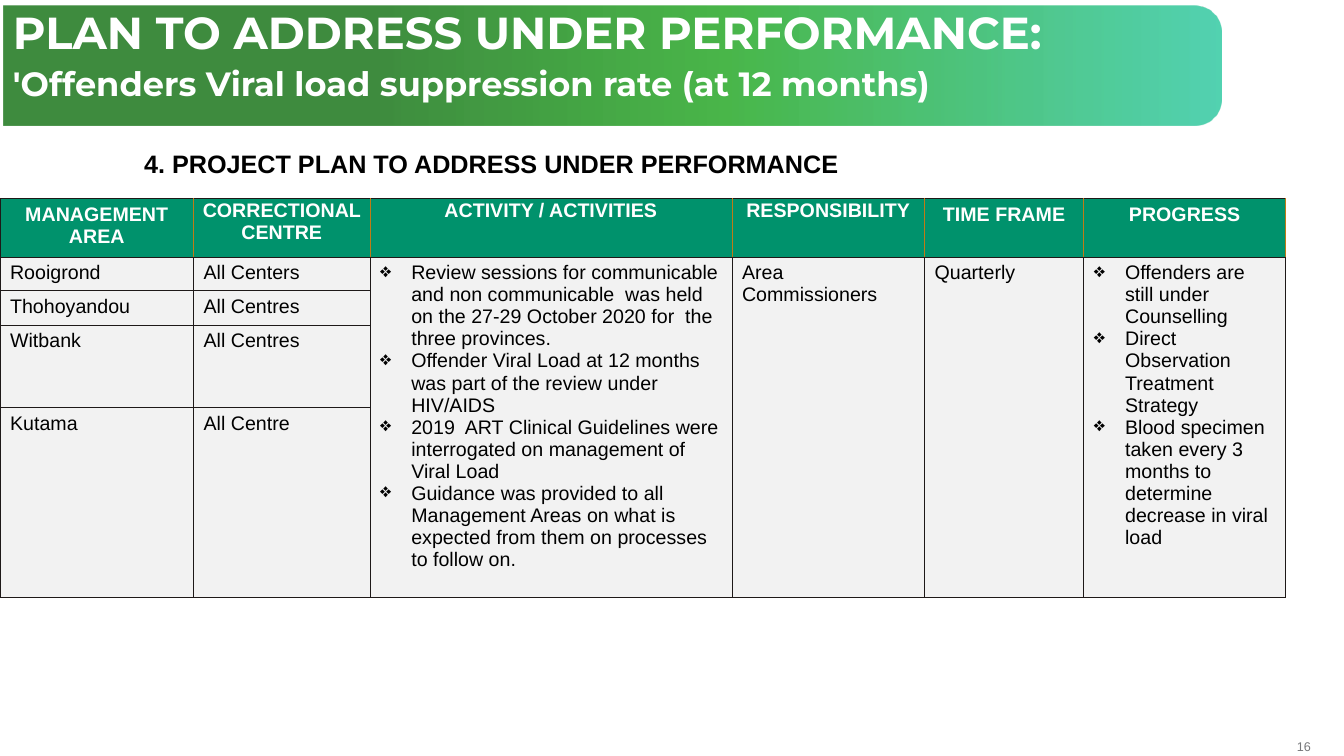
from lxml.etree import SubElement
from pptx import Presentation
from pptx.dml.color import RGBColor
from pptx.enum.shapes import MSO_SHAPE as Shape
from pptx.enum.text import MSO_ANCHOR as Anchor, PP_ALIGN as Align
from pptx.oxml.ns import qn
from pptx.util import Inches, Pt

COLORS = {
    "white": "FFFFFF", "black": "000000", "gray": "77787B",
    "header": "00926C", "body": "F2F2F2",
    "line": "1E1918", "divider": "BF7B17",
    "dark green": "006600", "green": "009900", "teal": "00BC8D",
}


def write(frame, lines, size, color, font="Arial", bold=False, **layout):
    """Fill a text frame with one paragraph per line."""
    frame.word_wrap = True
    for index, line in enumerate(lines):
        para = frame.paragraphs[0] if index == 0 else frame.add_paragraph()
        for name, value in layout.items():
            setattr(para, name, value)
        span = para.add_run()
        span.text = line
        formats = {"name": font, "size": Pt(size), "bold": bold}
        for name, value in formats.items():
            setattr(span.font, name, value)
        span.font.color.rgb = RGBColor.from_string(COLORS[color])


def add_color(parent, color, alpha=100):
    """Add a colour element with an opacity in percent."""
    tint = SubElement(parent, qn("a:srgbClr"), val=COLORS[color])
    if alpha < 100:
        SubElement(tint, qn("a:alpha"), val=str(alpha * 1000))


deck = Presentation()
deck.slide_width, deck.slide_height = Inches(13.33), Inches(7.5)
page = deck.slides.add_slide(deck.slide_layouts[6])

# Slide number
number = page.shapes.add_textbox(Inches(12.61), Inches(7.33), Inches(0.39), Inches(0.15))
frame = number.text_frame
for side in ("left", "top", "right", "bottom"):
    setattr(frame, f"margin_{side}", 0)
frame.vertical_anchor = Anchor.MIDDLE
write(frame, ["16"], 9, "gray", alignment=Align.RIGHT)

# Title banner: rounded on its right end once turned
banner = page.shapes.add_shape(Shape.ROUND_2_SAME_RECTANGLE,
                               Inches(5.48), Inches(-5.39), Inches(1.19), Inches(12.08))
banner.rotation = 90
banner.adjustments[0], banner.adjustments[1] = 0.233, 0
banner.shadow.inherit = False
banner.line.fill.background()
banner.fill.gradient()
gradient = banner.fill._xPr.find(qn("a:gradFill"))
gradient.set("rotWithShape", "1")
for part in list(gradient):
    gradient.remove(part)
stops = SubElement(gradient, qn("a:gsLst"))
for position, color, alpha in [(30, "dark green", 75), (59, "green", 71), (100, "teal", 67)]:
    add_color(SubElement(stops, qn("a:gs"), pos=str(position * 1000)), color, alpha)
SubElement(gradient, qn("a:lin"), ang=str(270 * 60000), scaled="0")

# Section heading
heading = page.shapes.add_textbox(Inches(1.33), Inches(1.42), Inches(8.42), Inches(0.4))
write(heading.text_frame, ["4. PROJECT PLAN TO ADDRESS UNDER PERFORMANCE"], 18, "black", bold=True)

# Table content
headers = ["MANAGEMENT AREA", "CORRECTIONAL CENTRE", "ACTIVITY / ACTIVITIES",
           "RESPONSIBILITY", "TIME FRAME", "PROGRESS"]
centres = [("Rooigrond", "All Centers"), ("Thohoyandou", "All Centres"),
           ("Witbank", "All Centres"), ("Kutama", "All Centre")]
merged = {
    2: ["Review sessions for communicable and non communicable  was held on the "
        "27-29 October 2020 for  the three provinces.",
        "Offender Viral Load at 12 months was part of the review under HIV/AIDS",
        "2019  ART Clinical Guidelines were interrogated on management of Viral Load",
        "Guidance was provided to all Management Areas on what is expected from them "
        "on processes to follow on."],
    3: ["Area Commissioners"],
    4: ["Quarterly"],
    5: ["Offenders are still under Counselling",
        "Direct Observation Treatment Strategy",
        "Blood specimen taken every 3 months to determine decrease in viral load"],
}
widths = [1.92, 1.75, 3.59, 1.91, 1.58, 2]
heights = [0.58, 0.33, 0.34, 0.82, 1.88]

# Table grid, borders and fills
table = page.shapes.add_table(len(heights), len(widths), 0, Inches(1.97),
                              Inches(sum(widths)), Inches(sum(heights))).table
table.first_row = table.horz_banding = False
for column, width in zip(table.columns, widths):
    column.width = Inches(width)
for row, height in zip(table.rows, heights):
    row.height = Inches(height)
for r in range(len(heights)):
    for c in range(len(widths)):
        cell = table.cell(r, c)
        borders = {"lnL": "divider" if r == 0 and c > 0 else "line",
                   "lnR": "divider" if r == 0 else "line",
                   "lnT": "line", "lnB": "line"}
        for edge, color in borders.items():
            line = SubElement(cell._tc.get_or_add_tcPr(), qn(f"a:{edge}"), w=str(Pt(0.5)))
            add_color(SubElement(line, qn("a:solidFill")), color)
        cell.fill.solid()
        cell.fill.fore_color.rgb = RGBColor.from_string(COLORS["body" if r else "header"])

# Table text
for c, header in enumerate(headers):
    cell = table.cell(0, c)
    if c in (1, 2, 3):
        cell.margin_left = cell.margin_top = cell.margin_right = Inches(0.01)
        cell.margin_bottom = 0
    write(cell.text_frame, [header], 14, "white", bold=True, alignment=Align.CENTER)
for r, names in enumerate(centres, start=1):
    for c, name in enumerate(names):
        write(table.cell(r, c).text_frame, [name], 14, "black")
for c, lines in merged.items():
    cell = table.cell(1, c)
    cell.merge(table.cell(len(centres), c))
    write(cell.text_frame, lines, 14, "black")
    if len(lines) > 1:
        for para in cell.text_frame.paragraphs:
            properties = para._p.get_or_add_pPr()
            properties.set("marL", str(Inches(0.31)))
            properties.set("indent", str(Inches(-0.31)))
            SubElement(properties, qn("a:buChar"), char="❖")

# Title
title = page.shapes.add_textbox(Inches(0.03), Inches(0.06), Inches(11.98), Inches(0.57))
title_lines = [("PLAN TO ADDRESS UNDER PERFORMANCE:", 32),
               ("'Offenders Viral load suppression rate (at 12 months)", 24)]
write(title.text_frame, [text for text, size in title_lines], 32, "white",
      font="Montserrat", bold=True, line_spacing=0.9, space_after=Pt(6))
for para, (text, size) in zip(title.text_frame.paragraphs, title_lines):
    para.runs[0].font.size = Pt(size)

deck.save("out.pptx")
